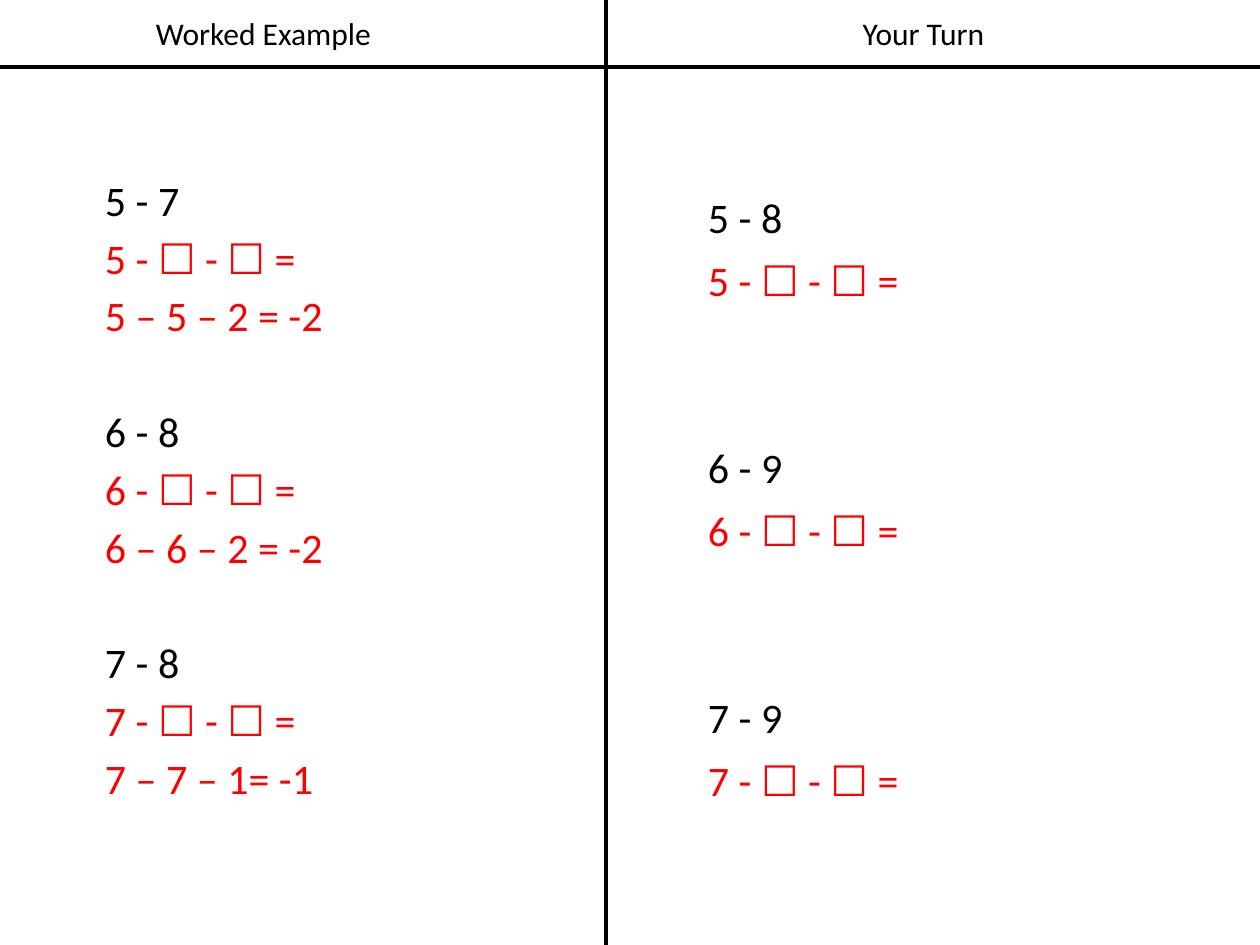
from lxml import etree
from pptx import Presentation, util as u
from pptx.dml.color import RGBColor
from pptx.enum import shapes, text
from pptx.oxml.ns import qn

PX = 914400 // 126
WIDTH, HEIGHT = 1260, 945
FONT = "Calibri"
COLOURS = {"question": "000000", "working": "FF0000", "rule": "000000"}

# Each group is a question followed by its working
COLUMNS = [
    {
        "heading": "Worked Example", "heading_left": 142,
        "box": (92, 178, 467, 658), "insets": (13, 6),
        "line_spacing": 0.8, "group_gap": 43,
        "groups": [
            ("5 - 7", "5 - ☐ - ☐ =", "5 – 5 – 2 = -2"),
            ("6 - 8", "6 - ☐ - ☐ =", "6 – 6 – 2 = -2"),
            ("7 - 8", "7 - ☐ - ☐ =", "7 – 7 – 1= -1"),
        ],
    },
    {
        "heading": "Your Turn", "heading_left": 802,
        "box": (699, 192, 450, 508), "insets": (9, 5),
        "line_spacing": 0.9, "group_gap": 81,
        "groups": [
            ("5 - 8", "5 - ☐ - ☐ ="),
            ("6 - 9", "6 - ☐ - ☐ ="),
            ("7 - 9", "7 - ☐ - ☐ ="),
        ],
    },
]
RULES = [(606, 0, 606, HEIGHT), (0, 67, WIDTH, 67)]


def px(*values):
    return [value * PX for value in values]


def add_box(slide, box, insets=(13, 6)):
    frame = slide.shapes.add_textbox(*px(*box)).text_frame
    frame.word_wrap = True
    frame.margin_left = frame.margin_right = insets[0] * PX
    frame.margin_top = frame.margin_bottom = insets[1] * PX
    return frame


def write(paragraph, words, size, colour, alignment):
    paragraph.text = words
    paragraph.alignment = alignment
    paragraph.font.name = FONT
    paragraph.font.size = u.Pt(size)
    paragraph.font.color.rgb = RGBColor.from_string(COLOURS[colour])


def add_groups(slide, column):
    frame = add_box(slide, column["box"], column["insets"])
    for group_index, group in enumerate(column["groups"]):
        for line_index, words in enumerate(group):
            first = group_index == line_index == 0
            paragraph = frame.paragraphs[0] if first else frame.add_paragraph()
            colour = "working" if line_index else "question"
            write(paragraph, words, 24, colour, text.PP_ALIGN.JUSTIFY)
            paragraph.line_spacing = column["line_spacing"]
            starts_group = group_index and not line_index
            paragraph.space_before = u.Pt(column["group_gap"] if starts_group else 10)


def add_rule(slide, ends):
    rule = slide.shapes.add_connector(shapes.MSO_CONNECTOR.STRAIGHT, *px(*ends))
    rule.line.width = u.Pt(2.5)
    rule.line.color.rgb = RGBColor.from_string(COLOURS["rule"])
    etree.SubElement(rule._element.spPr, qn("a:effectLst"))


def main():
    presentation = Presentation()
    presentation.slide_width, presentation.slide_height = px(WIDTH, HEIGHT)
    slide = presentation.slides.add_slide(presentation.slide_layouts[6])

    # Sums in each column
    for column in COLUMNS:
        add_groups(slide, column)

    # Column headings
    for column in COLUMNS:
        frame = add_box(slide, (column["heading_left"], 8, 243, 51))
        write(frame.paragraphs[0], column["heading"], 18, "question", text.PP_ALIGN.CENTER)

    # Dividing rules
    for ends in RULES:
        add_rule(slide, ends)

    presentation.save("out.pptx")


if __name__ == "__main__":
    main()
